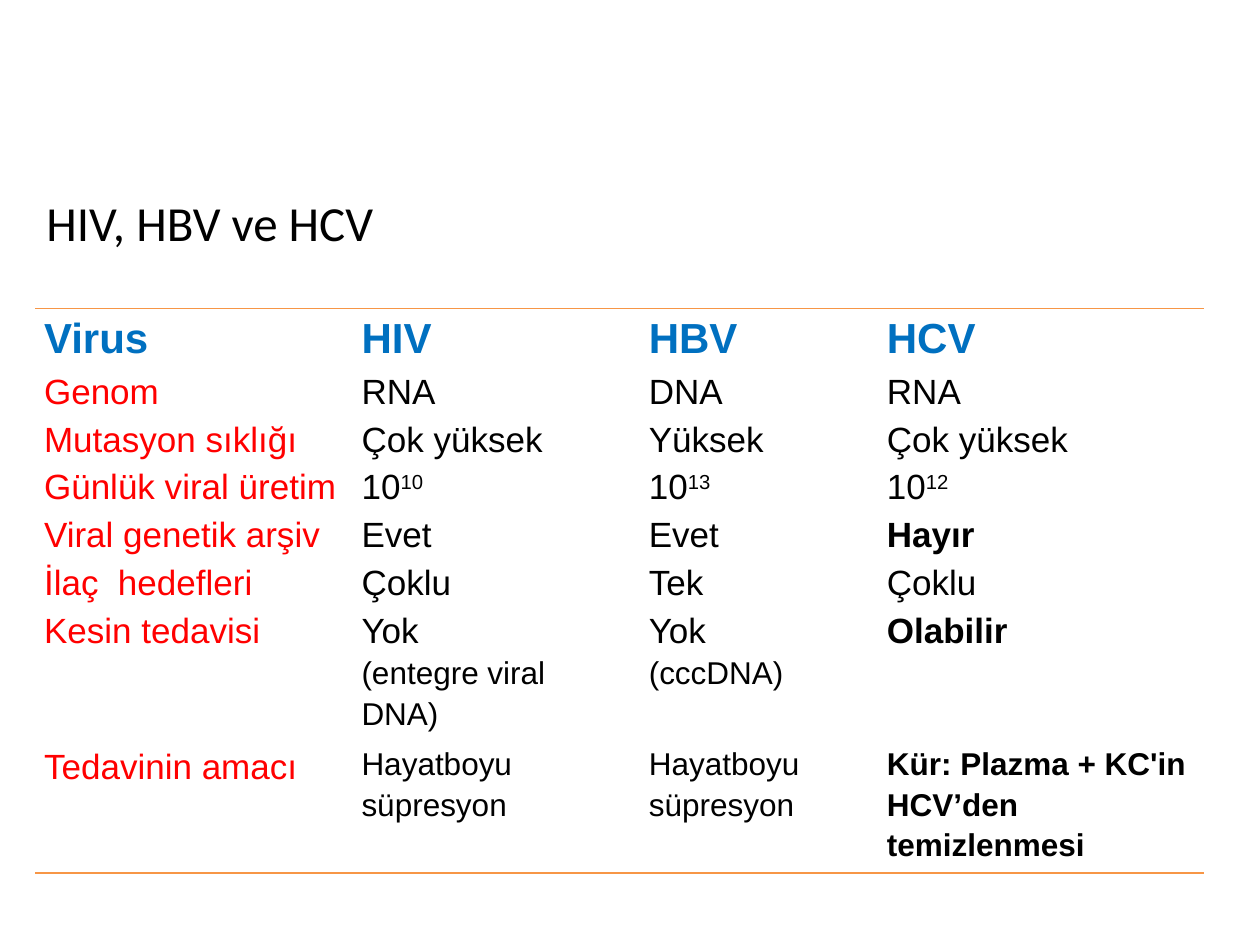
from dataclasses import dataclass

from lxml import etree
from pptx import Presentation
from pptx.dml.color import RGBColor
from pptx.enum.text import MSO_AUTO_SIZE
from pptx.oxml.ns import qn
from pptx.util import Inches, Pt

FIT_SHAPE = MSO_AUTO_SIZE.SHAPE_TO_FIT_TEXT


@dataclass(frozen=True)
class Theme:
    title_font: str = "Calibri"
    table_font: str = "Arial"
    title_size: int = 28
    head_size: int = 24
    body_size: int = 20
    note_size: int = 18
    text: str = "000000"
    head: str = "0070C0"
    label: str = "FF0000"
    rule: str = "F79646"
    line_spacing: float = 1.15


THEME = Theme()
TITLE = "HIV, HBV ve HCV"

# A line break starts a paragraph; "^" starts a superscript
ROWS = [
    ["Virus", "HIV", "HBV", "HCV"],
    ["Genom", "RNA", "DNA", "RNA"],
    ["Mutasyon sıklığı", "Çok yüksek", "Yüksek", "Çok yüksek"],
    ["Günlük viral üretim", "10^10", "10^13", "10^12"],
    ["Viral genetik arşiv", "Evet", "Evet", "Hayır"],
    ["İlaç  hedefleri", "Çoklu", "Tek", "Çoklu"],
    ["Kesin tedavisi", "Yok\n(entegre viral DNA)", "Yok\n(cccDNA)", "Olabilir"],
    ["Tedavinin amacı", "Hayatboyu\nsüpresyon", "Hayatboyu\nsüpresyon",
     "Kür: Plazma + KC'in\nHCV’den temizlenmesi"],
]
LAST = len(ROWS) - 1
BOLD_CELLS = {(4, 3), (6, 3), (LAST, 3)}
COL_WIDTHS = [2.52, 2.28, 1.89, 2.59]
ROW_HEIGHTS = [0.46] + [0.38] * 5 + [1.08, 1.04]


def style_font(font, name, size, color, bold=False):
    font.name = name
    font.size = Pt(size)
    font.bold = bold
    font.color.rgb = RGBColor.from_string(color)


def set_borders(cell, visible):
    """Draw the sides named in visible and clear the others."""
    tcPr = cell._tc.get_or_add_tcPr()
    for i, side in enumerate(("lnL", "lnR", "lnT", "lnB")):
        ln = etree.Element(qn(f"a:{side}"), w=str(Pt(1)), cmpd="sng")
        if side in visible:
            fill = etree.SubElement(ln, qn("a:solidFill"))
            etree.SubElement(fill, qn("a:srgbClr"), val=THEME.rule)
            etree.SubElement(ln, qn("a:prstDash"), val="solid")
        else:
            etree.SubElement(ln, qn("a:noFill"))
        tcPr.insert(i, ln)


def fill_cell(cell, text, row, col):
    cell.fill.background()
    cell.margin_left, cell.margin_right = Inches(0.07), Inches(0.08)
    cell.margin_top = cell.margin_bottom = 0
    if row == 0:
        color = THEME.head
    else:
        color = THEME.text if col else THEME.label
    bold = row == 0 or (row, col) in BOLD_CELLS

    tf = cell.text_frame
    for i, line in enumerate(text.split("\n")):
        p = tf.paragraphs[0] if i == 0 else tf.add_paragraph()
        p.line_spacing = THEME.line_spacing
        if row == 0:
            size = THEME.head_size
        elif i or (row == LAST and col):
            size = THEME.note_size
        else:
            size = THEME.body_size
        base, _, power = line.partition("^")
        runs = [p.add_run()]
        runs[0].text = base
        if power:
            runs.append(p.add_run())
            runs[1].text = power
            runs[1].font._element.set("baseline", "30000")
        for r in runs:
            style_font(r.font, THEME.table_font, size, color, bold)


def add_title(slide, left, top, width, height):
    tf = slide.shapes.add_textbox(left, top, width, height).text_frame
    tf.word_wrap = False
    tf.auto_size = FIT_SHAPE
    p = tf.paragraphs[0]
    p.text = TITLE
    style_font(p.font, THEME.title_font, THEME.title_size, THEME.text)


def add_virus_table(slide, left, top, width, height):
    frame = slide.shapes.add_table(len(ROWS), len(COL_WIDTHS),
                                   left, top, width, height)
    table = frame.table
    table.first_row = table.horz_banding = False
    for column, w in zip(table.columns, COL_WIDTHS):
        column.width = Inches(w)
    for row, h in zip(table.rows, ROW_HEIGHTS):
        row.height = Inches(h)

    for r, values in enumerate(ROWS):
        rules = {0: {"lnT"}, LAST: {"lnB"}}.get(r, set())
        for c, text in enumerate(values):
            cell = table.cell(r, c)
            fill_cell(cell, text, r, c)
            set_borders(cell, rules)


def main():
    prs = Presentation()
    prs.slide_width, prs.slide_height = Inches(10), Inches(7.5)
    slide = prs.slides.add_slide(prs.slide_layouts[6])
    add_virus_table(slide, Inches(0.28), Inches(2.45),
                    Inches(sum(COL_WIDTHS)), Inches(sum(ROW_HEIGHTS)))
    add_title(slide, Inches(0.27), Inches(1.48), Inches(2.82), Inches(0.57))
    prs.save("out.pptx")


if __name__ == "__main__":
    main()
